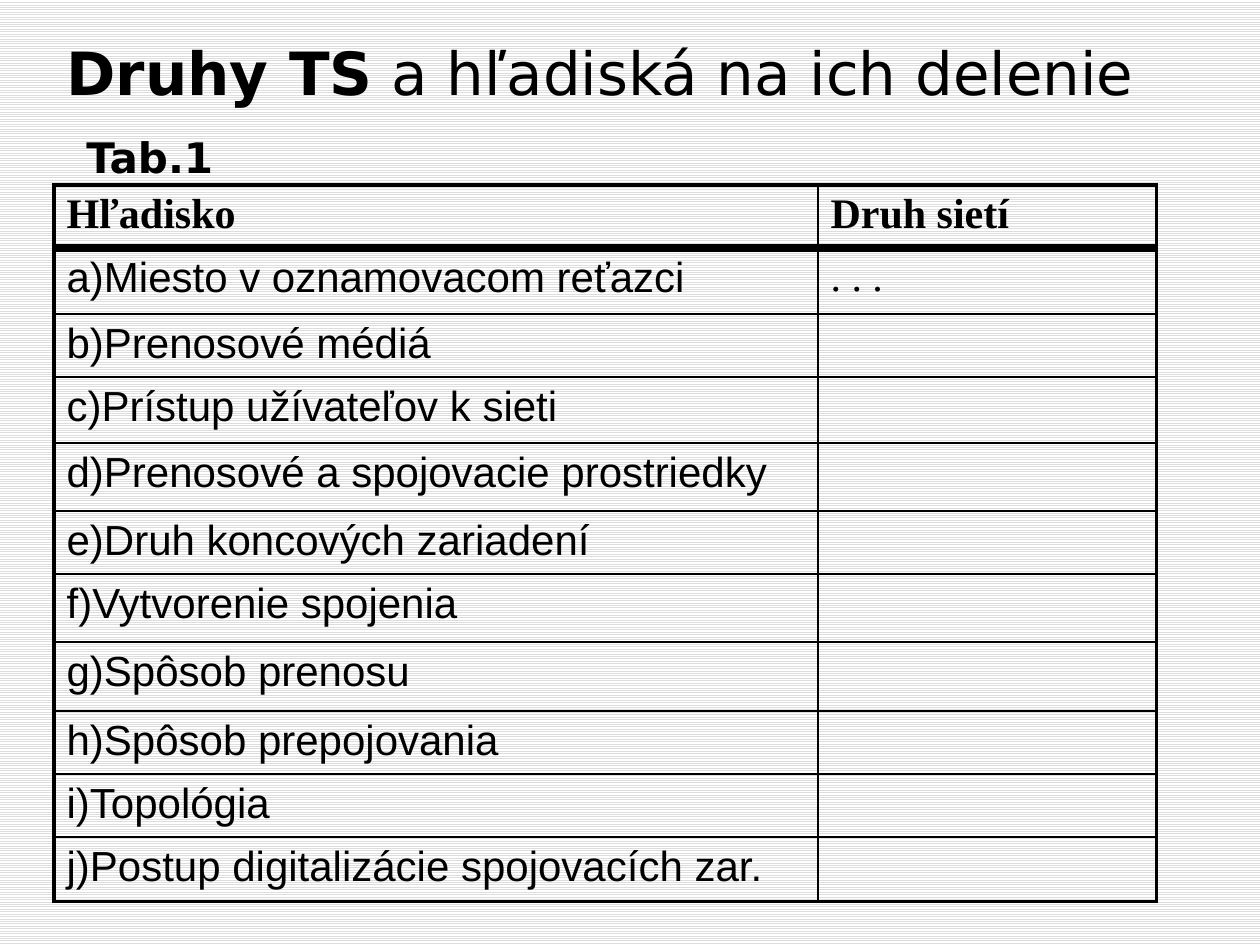
from lxml import etree
from pptx import Presentation
from pptx import util as u
from pptx.dml.color import RGBColor
from pptx.enum import dml, text
from pptx.oxml import ns

PX = 914400 // 126
BLACK = RGBColor(0, 0, 0)
WHITE = RGBColor(255, 255, 255)
STRIPE = RGBColor(0xDD, 0xDD, 0xDD)
HEADING_FONT = "DejaVu Sans"
HEADER_FONT = "Times New Roman"
BODY_FONT = "Arial"

HEADERS = ["Hľadisko", "Druh sietí"]
CRITERIA = [
    "a)Miesto v oznamovacom reťazci",
    "b)Prenosové médiá",
    "c)Prístup užívateľov k sieti",
    "d)Prenosové a spojovacie prostriedky",
    "e)Druh koncových zariadení",
    "f)Vytvorenie spojenia",
    "g)Spôsob prenosu",
    "h)Spôsob prepojovania",
    "i)Topológia",
    "j)Postup digitalizácie spojovacích zar.",
]
COLUMN_WIDTHS = [764, 339]
ROW_HEIGHTS = [63, 66, 63, 66, 68, 63, 68, 69, 63, 63, 64]


def add_text(paragraph, wording, font=BODY_FONT, size=24, bold=False):
    run = paragraph.add_run()
    run.text = wording
    run.font.name = font
    run.font.size = u.Pt(size)
    run.font.bold = bold
    run.font.color.rgb = BLACK


def place(shape, left, top, width, height):
    shape.left, shape.top = left * PX, top * PX
    shape.width, shape.height = width * PX, height * PX


def set_borders(cell, **widths):
    properties = cell._tc.get_or_add_tcPr()
    for side in ("L", "R", "T", "B"):
        line = etree.SubElement(properties, ns.qn(f"a:ln{side}"), w=str(u.Pt(widths[side])))
        fill = etree.SubElement(line, ns.qn("a:solidFill"))
        etree.SubElement(fill, ns.qn("a:srgbClr"), val=str(BLACK))


def build_title(slide, left, top, width, height):
    title = slide.shapes.title
    place(title, left, top, width, height)
    frame = title.text_frame
    frame.vertical_anchor = text.MSO_ANCHOR.BOTTOM
    frame.auto_size = text.MSO_AUTO_SIZE.NONE
    paragraph = frame.paragraphs[0]
    paragraph.alignment = text.PP_ALIGN.LEFT
    add_text(paragraph, "Druhy TS", HEADING_FONT, 34, True)
    add_text(paragraph, " a hľadiská na ich delenie", HEADING_FONT, 34)


def build_caption(slide, left, top, width, height):
    caption = slide.shapes.add_textbox(0, 0, 0, 0)
    place(caption, left, top, width, height)
    caption.text_frame.word_wrap = True
    add_text(caption.text_frame.paragraphs[0], "Tab.1", HEADING_FONT, bold=True)


def build_table(slide, left, top):
    rows = [HEADERS] + [[criterion, ""] for criterion in CRITERIA]
    rows[1][1] = ". . ."
    frame = slide.shapes.add_table(
        len(rows), len(HEADERS), left * PX, top * PX,
        sum(COLUMN_WIDTHS) * PX, sum(ROW_HEIGHTS) * PX)
    table = frame.table
    table.first_row = table.horz_banding = False
    for column, width in zip(table.columns, COLUMN_WIDTHS):
        column.width = width * PX
    rules = [2, 5] + [1] * (len(rows) - 2) + [2]
    sides = [2, 1, 2]
    for i, wordings in enumerate(rows):
        table.rows[i].height = ROW_HEIGHTS[i] * PX
        for j, wording in enumerate(wordings):
            cell = table.cell(i, j)
            set_borders(cell, L=sides[j], R=sides[j + 1], T=rules[i], B=rules[i + 1])
            cell.fill.background()
            if wording:
                font = HEADER_FONT if i == 0 or j == 1 else BODY_FONT
                add_text(cell.text_frame.paragraphs[0], wording, font, bold=i == 0)


def main():
    presentation = Presentation()
    presentation.slide_width = 1260 * PX
    presentation.slide_height = 945 * PX
    slide = presentation.slides.add_slide(presentation.slide_layouts[5])
    background = slide.background.fill
    background.patterned()
    background.pattern = dml.MSO_PATTERN.LIGHT_HORIZONTAL
    background.fore_color.rgb = STRIPE
    background.back_color.rgb = WHITE
    build_title(slide, 54, 35, 1103, 79)
    build_caption(slide, 74, 125, 387, 63)
    build_table(slide, 54, 185)
    presentation.save("out.pptx")


if __name__ == "__main__":
    main()
